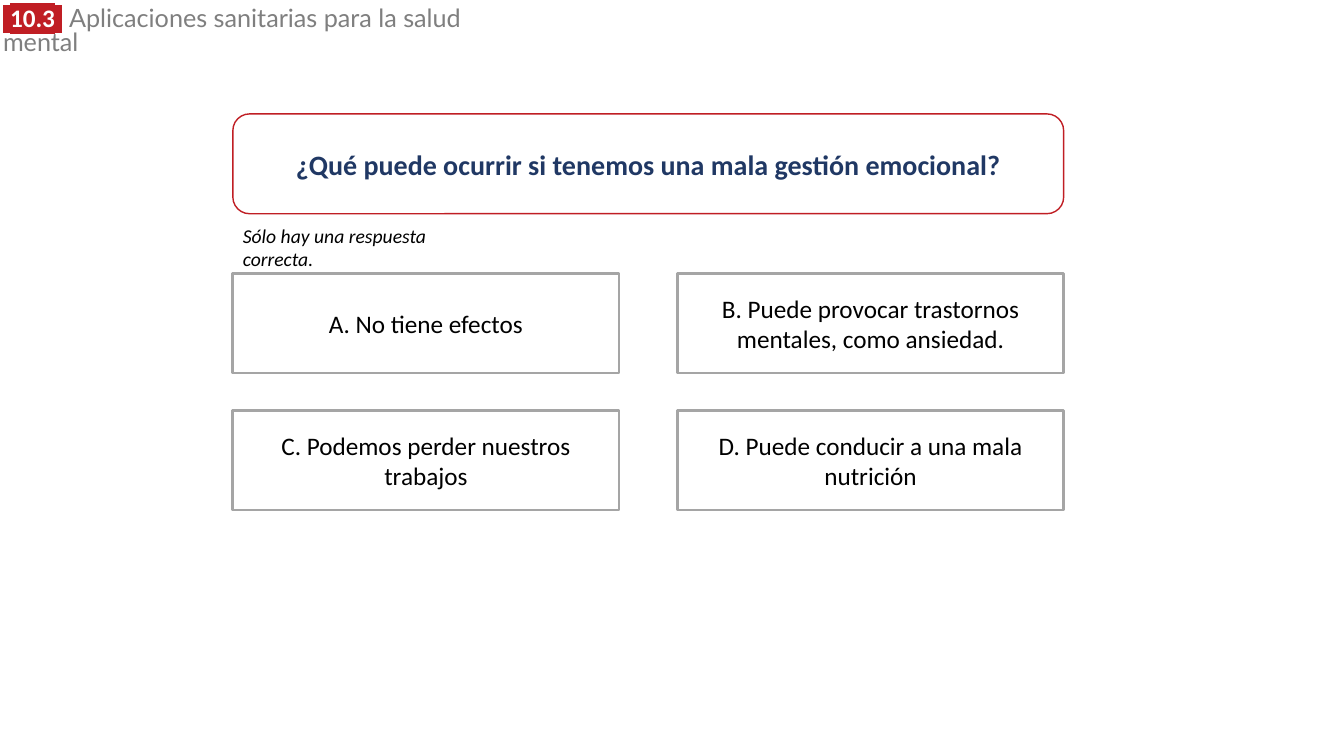
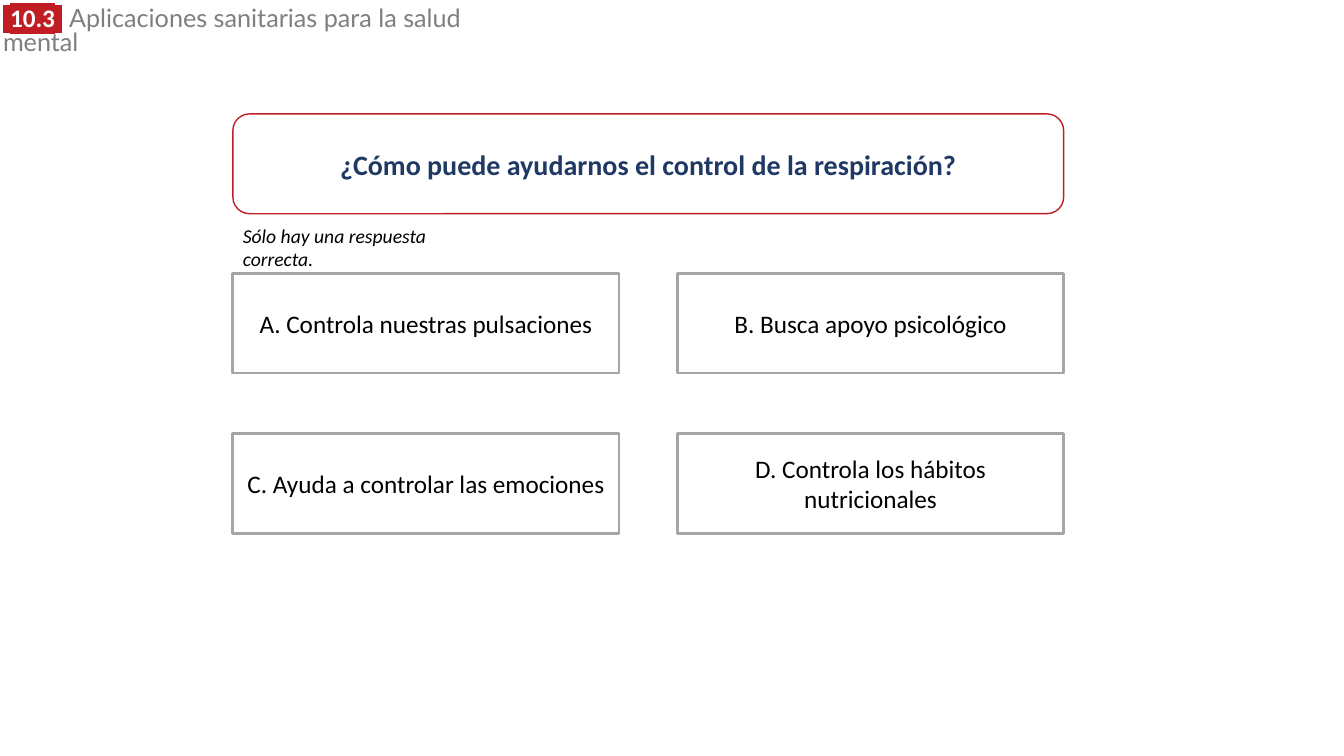
from lxml import etree
from pptx import Presentation
from pptx import util as u
from pptx.dml.color import RGBColor
from pptx.enum import shapes, text
from pptx.oxml.ns import qn

COLORS = {"red": "C01E24", "navy": "203864", "gray": "7F7F7F",
          "border": "A5A5A5", "white": "FFFFFF", "black": "000000"}

# Shared text formats
BADGE = {"size": u.Pt(18), "bold": True, "name": "Arial"}
QUESTION = {"size": u.Pt(20), "bold": True, "name": "Calibri"}
HINT = {"size": u.Pt(14), "italic": True, "name": "Calibri"}
ANSWER = {"size": u.Pt(18), "name": "Calibri"}

# Header runs: text, format, colour, highlight
HEADER = [
    (" ", BADGE, "white", "red"),
    ("10.3", {**BADGE, "name": "Calibri"}, "white", "red"),
    (" ", BADGE, "white", "red"),
    (" ", {**BADGE, "bold": False}, "gray", None),
    ("Aplicaciones sanitarias para la salud mental",
     {**BADGE, "bold": False, "name": "Lato"}, "gray", None),
]

# Grid shared by the question and its answers
LEFT, TOP, WIDTH = 2.31, 2.71, 8.24
BOX_W, BOX_H = 3.83, 0.99
COLUMN_STEP = WIDTH - BOX_W

# Question, distance between answer rows, answers
QUIZ = [
    ("¿Qué puede ocurrir si tenemos una mala gestión emocional?", 1.36,
     ["A. No tiene efectos",
      "B. Puede provocar trastornos mentales, como ansiedad.",
      "C. Podemos perder nuestros trabajos",
      "D. Puede conducir a una mala nutrición"]),
    ("¿Cómo puede ayudarnos el control de la respiración?", 1.59,
     ["A. Controla nuestras pulsaciones",
      "B. Busca apoyo psicológico",
      "C. Ayuda a controlar las emociones",
      "D. Controla los hábitos nutricionales"]),
]


def rgb(name):
    return RGBColor.from_string(COLORS[name])


def add_run(p, words, fmt, color, highlight=None):
    r = p.add_run()
    r.text = words
    for key, value in fmt.items():
        setattr(r.font, key, value)
    r.font.color.rgb = rgb(color)
    if highlight:
        mark = etree.Element(qn("a:highlight"))
        etree.SubElement(mark, qn("a:srgbClr"), val=COLORS[highlight])
        r.font.fill  # the highlight follows the text fill
        r._r.rPr.find(qn("a:solidFill")).addnext(mark)


def add_header(s):
    sp = s.shapes.title
    sp.left, sp.top, sp.width, sp.height = map(
        u.Inches, (-0.07, 0.03, 5.51, 0.34))
    tf = sp.text_frame
    tf.word_wrap = True
    tf.auto_size = text.MSO_AUTO_SIZE.SHAPE_TO_FIT_TEXT
    tf.vertical_anchor = text.MSO_ANCHOR.TOP
    p = tf.paragraphs[0]
    p.alignment = text.PP_ALIGN.LEFT
    p.line_spacing = 0.8
    for run in HEADER:
        add_run(p, *run)


def add_box(s, kind, at, words, fmt, color, border, border_pt):
    sp = s.shapes.add_shape(kind, *map(u.Inches, at))
    sp.shadow.inherit = False
    sp.fill.solid()
    sp.fill.fore_color.rgb = rgb("white")
    sp.line.color.rgb = rgb(border)
    sp.line.width = u.Pt(border_pt)
    tf = sp.text_frame
    tf.word_wrap = True
    tf.vertical_anchor = text.MSO_ANCHOR.MIDDLE
    p = tf.paragraphs[0]
    p.alignment = text.PP_ALIGN.CENTER
    add_run(p, words, fmt, color)


def add_hint(s):
    sp = s.shapes.add_textbox(*map(u.Inches, (LEFT, 2.17, 2.36, 0.34)))
    tf = sp.text_frame
    tf.word_wrap = True
    tf.auto_size = text.MSO_AUTO_SIZE.SHAPE_TO_FIT_TEXT
    add_run(tf.paragraphs[0], "Sólo hay una respuesta correcta.",
            HINT, "black")


def add_quiz_slide(prs, question, row_step, answers):
    s = prs.slides.add_slide(prs.slide_layouts[5])
    add_header(s)
    add_box(s, shapes.MSO_SHAPE.ROUNDED_RECTANGLE,
            (LEFT, 1.13, WIDTH, BOX_H), question, QUESTION, "navy", "red", 1)
    add_hint(s)
    # Answers in two columns
    for i, answer in enumerate(answers):
        row, col = divmod(i, 2)
        at = (LEFT + col * COLUMN_STEP, TOP + row * row_step, BOX_W, BOX_H)
        add_box(s, shapes.MSO_SHAPE.RECTANGLE, at, answer,
                ANSWER, "black", "border", 2)


def main():
    prs = Presentation()
    prs.slide_width, prs.slide_height = u.Inches(13.33), u.Inches(7.5)
    for quiz in QUIZ:
        add_quiz_slide(prs, *quiz)
    prs.save("out.pptx")


if __name__ == "__main__":
    main()
